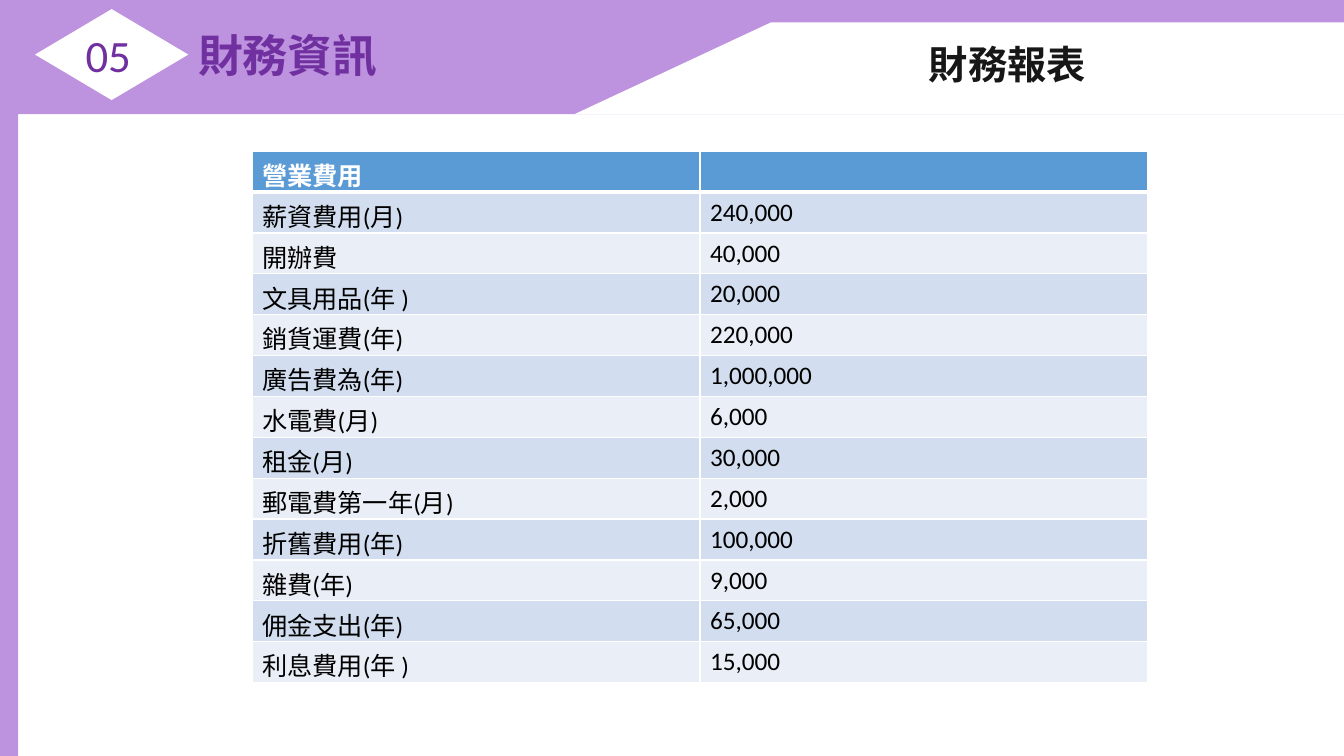
from lxml import etree
from pptx import Presentation
from pptx import util as u
from pptx.dml.color import RGBColor
from pptx.enum import shapes, text
from pptx.oxml import ns

LILAC = RGBColor(0xBD, 0x92, 0xDE)
PURPLE = RGBColor(0x70, 0x30, 0xA0)
WHITE = RGBColor(0xFF, 0xFF, 0xFF)
BLACK = RGBColor(0x00, 0x00, 0x00)
INK = RGBColor(0x18, 0x17, 0x17)
HEADER_BLUE = RGBColor(0x5B, 0x9B, 0xD5)
BANDS = (RGBColor(0xD2, 0xDE, 0xEF), RGBColor(0xEA, 0xEF, 0xF7))

EXPENSES = [
    ("營業費用", ""),
    ("薪資費用(月)", "240,000"),
    ("開辦費", "40,000"),
    ("文具用品(年 )", "20,000"),
    ("銷貨運費(年)", "220,000"),
    ("廣告費為(年)", "1,000,000"),
    ("水電費(月)", "6,000"),
    ("租金(月)", "30,000"),
    ("郵電費第一年(月)", "2,000"),
    ("折舊費用(年)", "100,000"),
    ("雜費(年)", "9,000"),
    ("佣金支出(年)", "65,000"),
    ("利息費用(年 )", "15,000"),
]


class SlideBuilder:
    def __init__(self, slide, font="Calibri"):
        self.slide = slide
        self.font = font

    def style(self, paragraph, size, color, bold=False):
        paragraph.font.name = self.font
        paragraph.font.size = u.Pt(size)
        paragraph.font.color.rgb = color
        paragraph.font.bold = bold

    def block(self, preset, color, *box):
        block = self.slide.shapes.add_shape(preset, *map(u.Pt, box))
        block.shadow.inherit = False
        block.fill.solid()
        block.fill.fore_color.rgb = color
        block.line.fill.background()

    def label(self, words, box, size, color, bold=False, wrap=True, spacing=None):
        frame = self.slide.shapes.add_textbox(*map(u.Pt, box)).text_frame
        frame.word_wrap = wrap
        frame.auto_size = text.MSO_AUTO_SIZE.SHAPE_TO_FIT_TEXT
        paragraph = frame.paragraphs[0]
        paragraph.text = words
        self.style(paragraph, size, color, bold)
        if spacing:
            paragraph.line_spacing = u.Pt(spacing)

    def borders(self, cell, top, bottom):
        """Draw white cell edges; top and bottom are widths in points."""
        properties = cell._tc.get_or_add_tcPr()
        edges = (("lnL", 1), ("lnR", 1), ("lnT", top), ("lnB", bottom))
        for position, (edge, width) in enumerate(edges):
            line = etree.Element(ns.qn(f"a:{edge}"), w=str(u.Pt(width)))
            fill = etree.SubElement(line, ns.qn("a:solidFill"))
            etree.SubElement(fill, ns.qn("a:srgbClr"), val=str(WHITE))
            properties.insert(position, line)

    def table(self, rows, left, top, width, row_height):
        columns = len(rows[0])
        table = self.slide.shapes.add_table(
            len(rows), columns, u.Pt(left), u.Pt(top),
            u.Pt(width), u.Pt(row_height * len(rows))).table
        for column in table.columns:
            column.width = u.Pt(width / columns)
        for r, row in enumerate(rows):
            table.rows[r].height = u.Pt(row_height)
            header = r == 0
            for c, words in enumerate(row):
                cell = table.cell(r, c)
                cell.fill.solid()
                cell.fill.fore_color.rgb = HEADER_BLUE if header else BANDS[(r - 1) % 2]
                self.borders(cell, 3 if r == 1 else 1, 3 if header else 1)
                paragraph = cell.text_frame.paragraphs[0]
                paragraph.text = words
                self.style(paragraph, 18, WHITE if header else BLACK, header)


def main():
    deck = Presentation()
    deck.slide_width, deck.slide_height = u.Pt(960), u.Pt(540)
    page = SlideBuilder(deck.slides.add_slide(deck.slide_layouts[6]))
    preset = shapes.MSO_SHAPE

    page.block(preset.RECTANGLE, LILAC, 0, 0, 960, 81.5)
    page.block(preset.RECTANGLE, LILAC, 0, 0, 13, 540)
    page.block(preset.FLOWCHART_DECISION, WHITE, 25, 6.5, 109.5, 65)
    page.label("05", (54, 16, 74, 46), 32, PURPLE)
    page.block(preset.FLOWCHART_DATA, WHITE, 410.5, 16, 701, 65.5)
    page.label("財務資訊", (134.5, 16, 158.5, 46), 32, PURPLE, bold=True)
    page.table(EXPENSES, 180, 108, 640, 29.2)
    page.label("財務報表", (656.5, 41.5, 127.5, 28), 28, INK,
               bold=True, wrap=False, spacing=17.6)

    deck.save("out.pptx")


if __name__ == "__main__":
    main()
